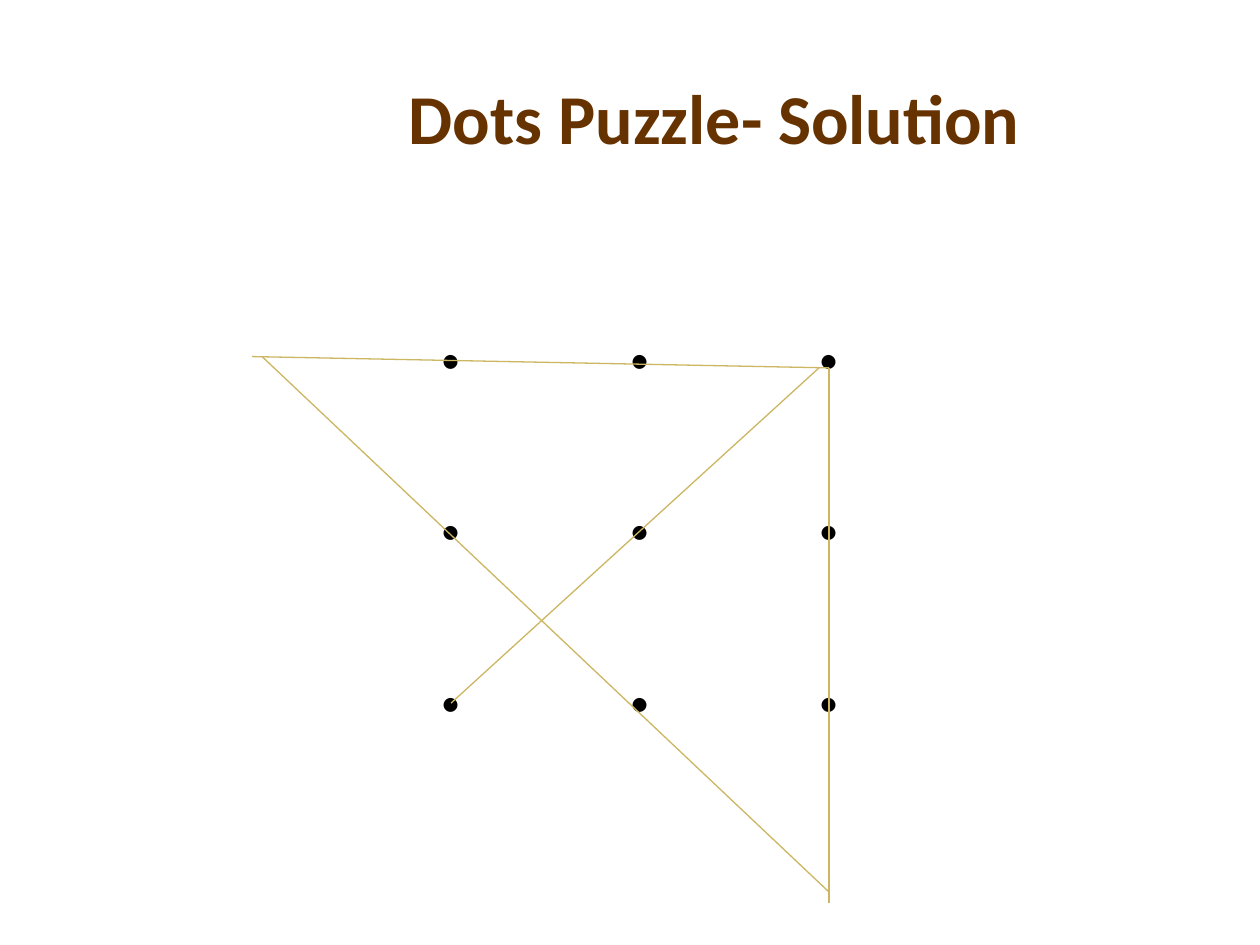
from dataclasses import dataclass

from lxml import etree
from pptx import Presentation
from pptx.dml.color import RGBColor
from pptx.enum.shapes import MSO_CONNECTOR
from pptx.enum.text import MSO_ANCHOR, PP_ALIGN
from pptx.oxml.ns import qn
from pptx.slide import Slide
from pptx.util import Inches, Pt

CENTER = PP_ALIGN.CENTER
MIDDLE = MSO_ANCHOR.MIDDLE
STRAIGHT = MSO_CONNECTOR.STRAIGHT

FONT = "Calibri"
COLORS = {"title": "663300", "dot": "000000", "stroke": "CCB661"}
GRID_SIZE = 3
COL_WIDTH, ROW_HEIGHT = 1.5, 1.36


@dataclass
class Stroke:
    x1: float
    y1: float
    x2: float
    y2: float


STROKES = [
    Stroke(2, 2.83, 6.58, 2.92),
    Stroke(6.58, 2.92, 6.58, 7.17),
    Stroke(3.58, 5.58, 6.5, 2.92),
    Stroke(2.08, 2.83, 6.58, 7.08),
]


def write(p, text: str, size: int, color: str, bold: bool = False) -> None:
    p.alignment = CENTER
    r = p.add_run()
    r.text = text
    r.font.name = FONT
    r.font.size = Pt(size)
    r.font.bold = bold
    r.font.color.rgb = RGBColor.from_string(COLORS[color])


def add_title(s: Slide, text: str) -> None:
    tf = s.shapes.add_textbox(Inches(1.57), Inches(0.3), Inches(8.2), Inches(1.25)).text_frame
    tf.word_wrap = True
    tf.vertical_anchor = MIDDLE
    write(tf.paragraphs[0], text, 40, "title", bold=True)


def add_dot_grid(s: Slide) -> None:
    """Lay out the dots as full stops in an unfilled square table."""
    table = s.shapes.add_table(
        GRID_SIZE, GRID_SIZE, Inches(2.83), Inches(2),
        Inches(COL_WIDTH * GRID_SIZE), Inches(ROW_HEIGHT * GRID_SIZE),
    ).table
    table.first_row = False
    table.horz_banding = False
    for cell in table.iter_cells():
        cell.fill.background()
        write(cell.text_frame.paragraphs[0], ".", 66, "dot")


def add_stroke(s: Slide, stroke: Stroke) -> None:
    line = s.shapes.add_connector(
        STRAIGHT, Inches(stroke.x1), Inches(stroke.y1), Inches(stroke.x2), Inches(stroke.y2)
    )
    line.line.color.rgb = RGBColor.from_string(COLORS["stroke"])
    line.line.width = Pt(0.75)
    etree.SubElement(line._element.spPr, qn("a:effectLst"))


def main() -> None:
    prs = Presentation()
    prs.slide_width, prs.slide_height = Inches(10), Inches(7.5)
    s = prs.slides.add_slide(prs.slide_layouts[6])
    add_title(s, "Dots Puzzle- Solution")
    add_dot_grid(s)
    for stroke in STROKES:
        add_stroke(s, stroke)
    prs.save("out.pptx")


if __name__ == "__main__":
    main()
